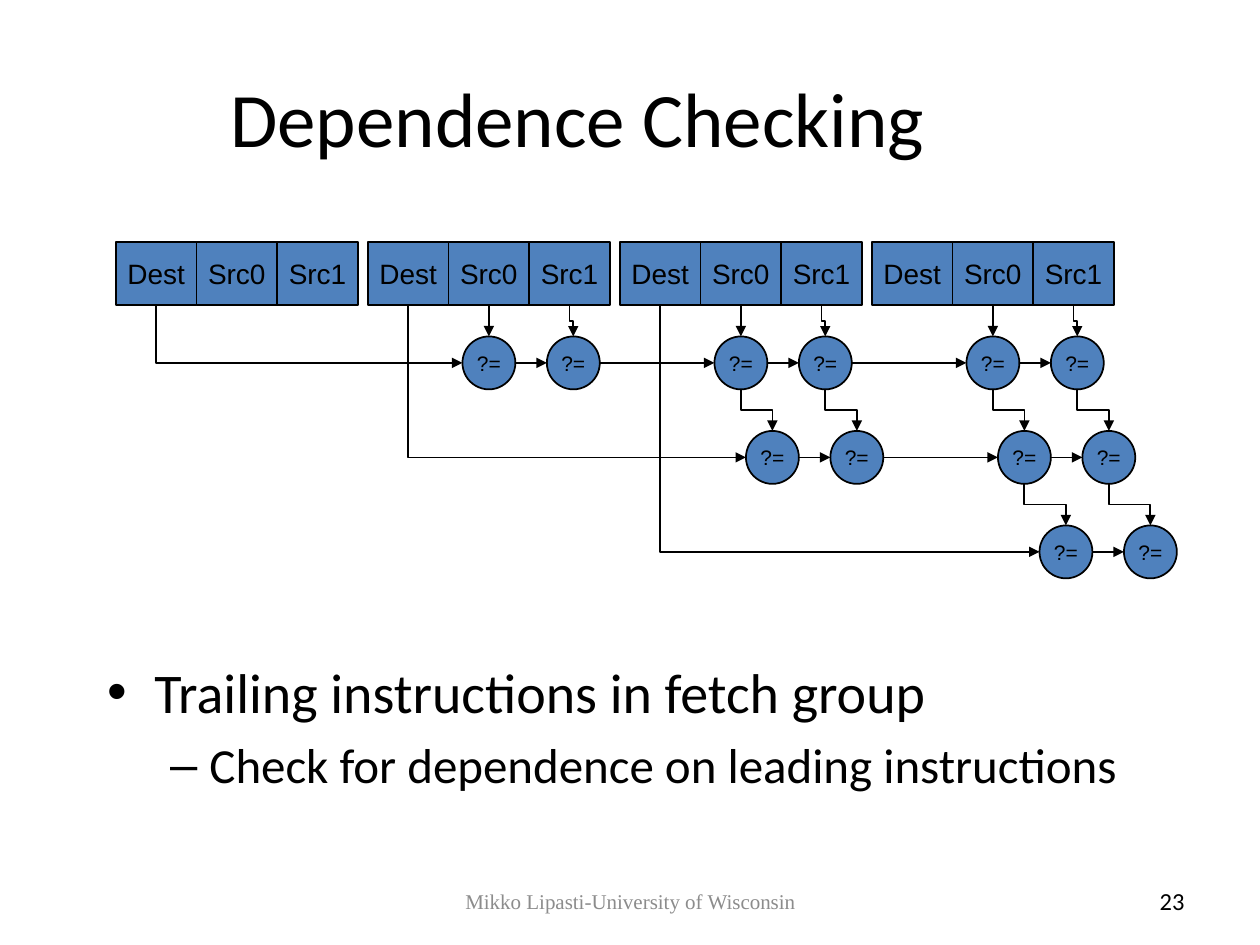
from dataclasses import dataclass

from lxml.etree import SubElement
from pptx import Presentation
from pptx.dml.color import RGBColor
from pptx.enum.shapes import MSO_CONNECTOR as Link, MSO_SHAPE as Shape
from pptx.enum.text import MSO_ANCHOR as Anchor, PP_ALIGN as Align
from pptx.oxml.ns import qn
from pptx.util import Inches, Pt


@dataclass(frozen=True)
class Theme:
    ink = RGBColor(0x00, 0x00, 0x00)
    fill = RGBColor(0x4F, 0x81, 0xBD)
    muted = RGBColor(0x8C, 0x8C, 0x8C)
    heading_font = "Calibri"
    diagram_font = "Arial"
    footer_font = "Times New Roman"
    title_size = Pt(44)
    body_sizes = (Pt(32), Pt(28))
    field_size = Pt(16)
    check_size = Pt(12)
    footer_size = Pt(12)
    number_size = Pt(14)
    line_width = Pt(1)


@dataclass(frozen=True)
class Box:
    left: float
    top: float
    width: float
    height: float

    @property
    def center(self):
        return self.left + self.width / 2

    @property
    def middle(self):
        return self.top + self.height / 2

    @property
    def right(self):
        return self.left + self.width

    @property
    def bottom(self):
        return self.top + self.height

    def lengths(self):
        return [Inches(side) for side in (self.left, self.top, self.width, self.height)]


THEME = Theme()
FIELDS = ("Dest", "Src0", "Src1")
INSTRUCTIONS = 4
INSTRUCTION_STEP = 2
CELL_WIDTH, CELL_HEIGHT = 0.64, 0.5
CHECK_SIZE = 0.42
CHECK_GAP = 0.67
CHECK_TOP = 0.75
ROW_STEP = 0.75
ROW_SHIFTS = (0, 0.25, 0.58)


def place(shape, box):
    shape.left, shape.top, shape.width, shape.height = box.lengths()


def style(para, size, font, color):
    for span in para.runs:
        span.font.size = size
        span.font.name = font
        span.font.color.rgb = color


def add_node(shapes, kind, box, text, size):
    node = shapes.add_shape(kind, *box.lengths())
    node.shadow.inherit = False
    node.fill.solid()
    node.fill.fore_color.rgb = THEME.fill
    node.line.color.rgb = THEME.ink
    node.line.width = THEME.line_width
    frame = node.text_frame
    frame.word_wrap = False
    frame.vertical_anchor = Anchor.MIDDLE
    frame.text = text
    frame.paragraphs[0].alignment = Align.CENTER
    style(frame.paragraphs[0], size, THEME.diagram_font, THEME.ink)
    return node


def add_arrow(page, kind, start, end):
    points = [Inches(value) for value in (*start, *end)]
    arrow = page.shapes.add_connector(kind, *points)
    arrow.line.color.rgb = THEME.ink
    arrow.line.width = THEME.line_width
    SubElement(arrow.line._get_or_add_ln(), qn("a:tailEnd"), type="triangle")
    SubElement(arrow._element.spPr, qn("a:effectLst"))
    return arrow


def add_elbow(page, start, end, preset="bentConnector3"):
    arrow = add_arrow(page, Link.ELBOW, start, end)
    across, down = end[0] - start[0], end[1] - start[1]
    left = (start[0] + end[0] - down) / 2
    top = (start[1] + end[1] - across) / 2
    place(arrow, Box(left, top, down, across))
    properties = arrow._element.spPr
    frame = properties.find(qn("a:xfrm"))
    frame.set("rot", str(270 * 60000))
    frame.set("flipH", "1")
    properties.find(qn("a:prstGeom")).set("prst", preset)


def add_instruction(page, box):
    group = page.shapes.add_group_shape()
    cells = []
    for index, field in enumerate(FIELDS):
        cell = Box(box.left + index * CELL_WIDTH, box.top, CELL_WIDTH, box.height)
        node = add_node(group.shapes, Shape.RECTANGLE, cell, field, THEME.field_size)
        cells.append((cell, node))
    return cells


def add_check_row(page, box, row, instructions):
    checks = {}
    for index in range(row + 1, INSTRUCTIONS):
        source = instructions[index][1][0]
        for side in range(2):
            left = source.center + ROW_SHIFTS[row] + side * CHECK_GAP - CHECK_SIZE / 2
            check = Box(left, box.top, CHECK_SIZE, CHECK_SIZE)
            node = add_node(page.shapes, Shape.OVAL, check, "?=", THEME.check_size)
            checks[index, side] = (check, node)
    ordered = [check for check, node in checks.values()]
    dest = instructions[row][0][0]
    add_elbow(page, (dest.center, dest.bottom), (ordered[0].left, ordered[0].middle), "bentConnector2")
    for before, after in zip(ordered, ordered[1:]):
        add_arrow(page, Link.STRAIGHT, (before.right, before.middle), (after.left, after.middle))
    return checks


def add_diagram(page, box):
    instructions = [
        add_instruction(page, Box(box.left + index * INSTRUCTION_STEP, box.top,
                                  CELL_WIDTH * len(FIELDS), CELL_HEIGHT))
        for index in range(INSTRUCTIONS)
    ]
    above = {(index, side): instructions[index][side + 1]
             for index in range(INSTRUCTIONS) for side in range(2)}
    for row in range(len(ROW_SHIFTS)):
        top = box.top + CHECK_TOP + row * ROW_STEP
        checks = add_check_row(page, Box(box.left, top, box.width, CHECK_SIZE), row, instructions)
        for key, (check, node) in checks.items():
            source, source_node = above[key]
            start, end = (source.center, source.bottom), (check.center, check.top)
            if row == 0 and key[1] == 0:
                arrow = add_arrow(page, Link.STRAIGHT, start, end)
                arrow.begin_connect(source_node, 2)
                arrow.end_connect(node, 0)
            else:
                add_elbow(page, start, end)
        above = checks


def add_title(page, box, text):
    title = page.shapes.title
    place(title, box)
    title.text_frame.text = text
    style(title.text_frame.paragraphs[0], THEME.title_size, THEME.heading_font, THEME.ink)


def add_body(page, box, lines):
    body = page.placeholders[1]
    place(body, box)
    frame = body.text_frame
    frame.text = "\n".join(lines)
    for level, para in enumerate(frame.paragraphs):
        para.level = level
        style(para, THEME.body_sizes[level], THEME.heading_font, THEME.ink)
    frame.paragraphs[0].space_before = Pt(0)


def add_footer_text(page, box, text, align, size, font, color):
    frame = page.shapes.add_textbox(*box.lengths()).text_frame
    frame.word_wrap = True
    frame.vertical_anchor = Anchor.MIDDLE
    frame.text = text
    frame.paragraphs[0].alignment = align
    style(frame.paragraphs[0], size, font, color)


def main():
    deck = Presentation()
    deck.slide_width, deck.slide_height = Inches(10), Inches(7.5)
    page = deck.slides.add_slide(deck.slide_layouts[1])
    add_title(page, Box(0.5, 0.3, 8.17, 1.25), "Dependence Checking")
    add_body(page, Box(0.75, 5.17, 8.5, 1.5),
             ("Trailing instructions in fetch group", "Check for dependence on leading instructions"))
    add_diagram(page, Box(0.92, 1.92, 8.42, 2.67))
    add_footer_text(page, Box(3.42, 6.95, 3.17, 0.4), "Mikko Lipasti-University of Wisconsin",
                    Align.CENTER, THEME.footer_size, THEME.footer_font, THEME.muted)
    add_footer_text(page, Box(8.33, 6.95, 1.17, 0.4), "23",
                    Align.RIGHT, THEME.number_size, THEME.heading_font, THEME.ink)
    deck.save("out.pptx")


if __name__ == "__main__":
    main()
